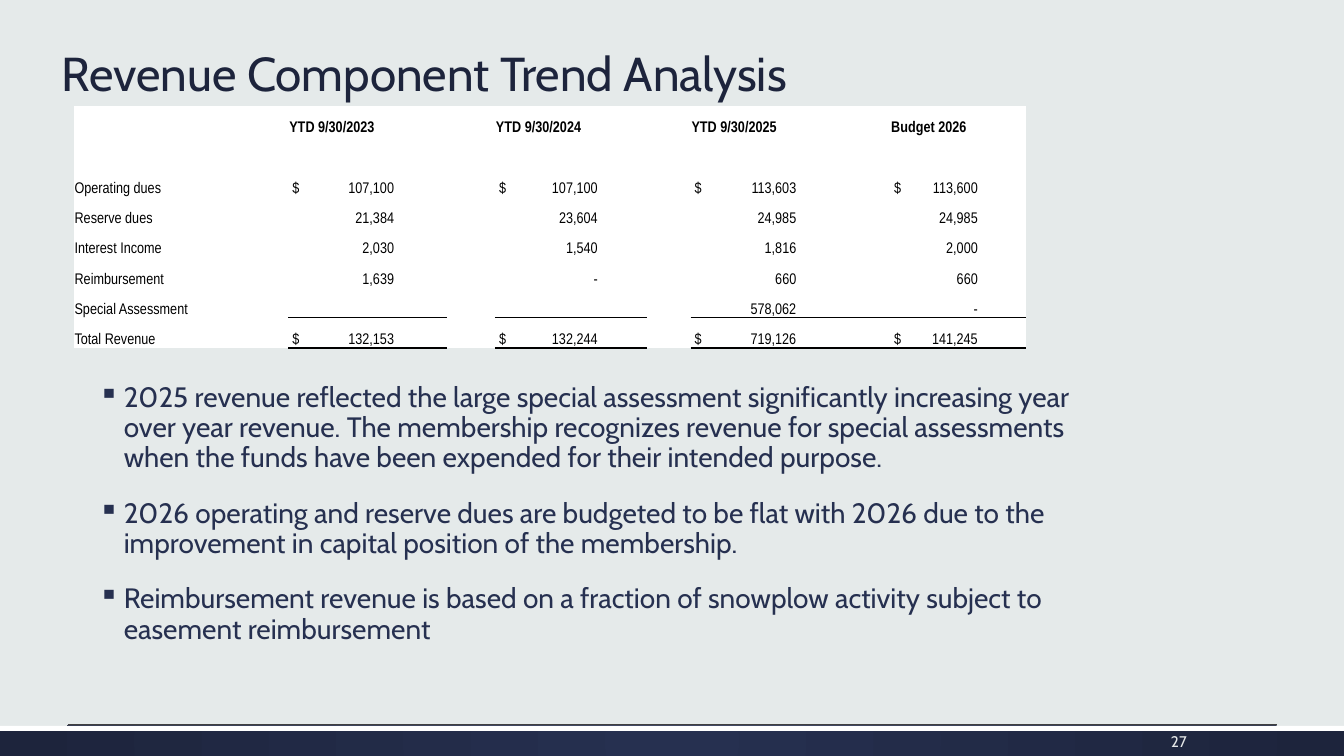
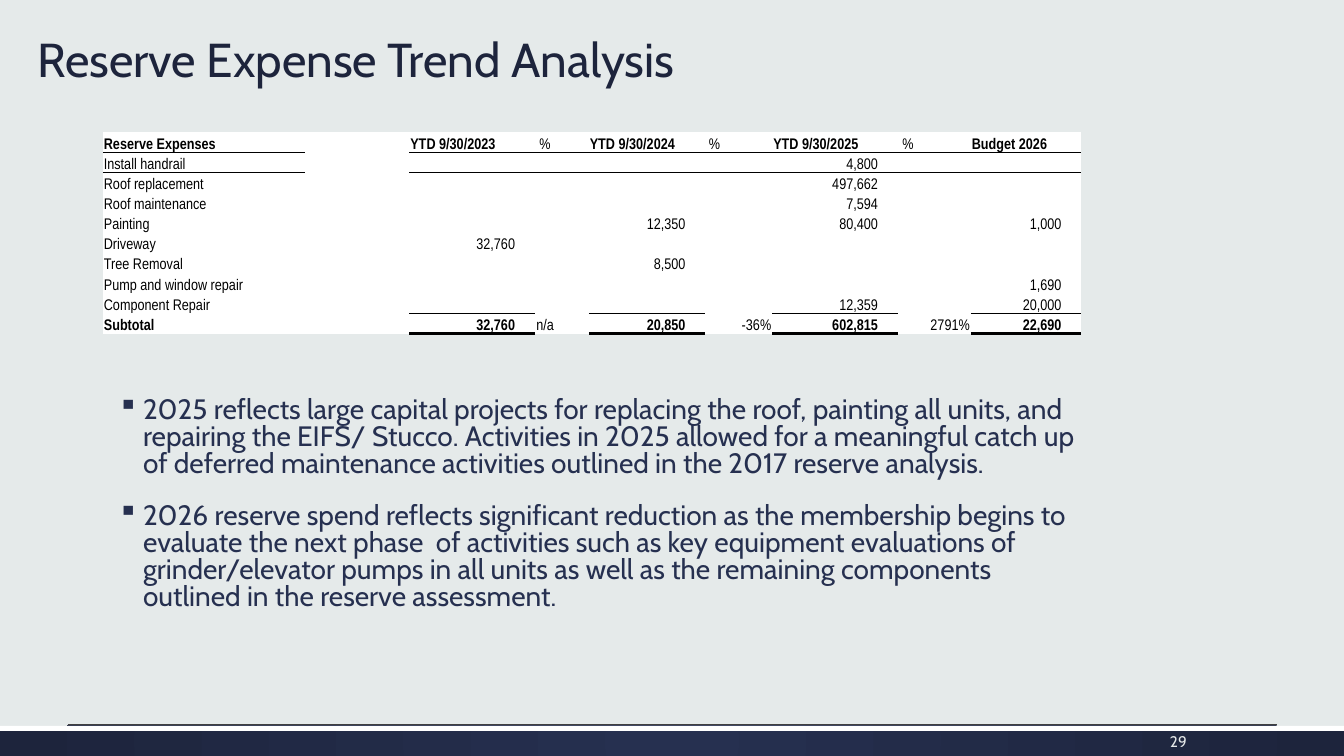
from lxml import etree
from pptx import Presentation
from pptx.dml.color import RGBColor
from pptx.enum.shapes import MSO_CONNECTOR, MSO_SHAPE
from pptx.enum.text import MSO_ANCHOR, MSO_AUTO_SIZE, PP_ALIGN
from pptx.oxml.ns import qn
from pptx.util import Inches, Pt

NAVY = RGBColor(0x26, 0x30, 0x50)
DARK_NAVY = RGBColor(0x1D, 0x24, 0x3C)
MIST = RGBColor(0xE5, 0xEA, 0xEA)
PALE = RGBColor(0xE5, 0xE8, 0xE8)
WHITE = RGBColor(0xFF, 0xFF, 0xFF)
BLACK = RGBColor(0, 0, 0)
RULE_GRAY = RGBColor(0x40, 0x40, 0x40)

HEADING_FONT = "Cabin"
TABLE_FONT = "Arial Narrow"
LEFT, RIGHT = PP_ALIGN.LEFT, PP_ALIGN.RIGHT
TOP, MIDDLE, BOTTOM = MSO_ANCHOR.TOP, MSO_ANCHOR.MIDDLE, MSO_ANCHOR.BOTTOM
NO_AUTOFIT = MSO_AUTO_SIZE.NONE
RECTANGLE = MSO_SHAPE.RECTANGLE
STRAIGHT = MSO_CONNECTOR.STRAIGHT

TITLE_ONLY = 5
SLIDE_WIDTH, SLIDE_HEIGHT = 13.33, 7.5
BAND_TOP = 7.2
PLAIN_TABLE_STYLE = "{2D5ABB26-0587-4C30-8999-92F81FD0307C}"
TABLE_TEXT_SIZE = 11
HAIRLINE, HEAVY = 0.5, 2


def add_element(parent, tag, **attributes):
    return etree.SubElement(parent, qn(tag), attributes)


def write(para, text, font=HEADING_FONT, size=20, color=NAVY, bold=False,
          align=LEFT, spacing=None, before=0):
    para.alignment = align
    para.space_before = Pt(before)
    if spacing:
        para.line_spacing = spacing
    span = para.add_run()
    span.text = text
    span.font.name = font
    span.font.size = Pt(size)
    span.font.bold = bold
    span.font.color.rgb = color


def prepare_frame(box, anchor):
    frame = box.text_frame
    frame.word_wrap = True
    frame.auto_size = NO_AUTOFIT
    frame.vertical_anchor = anchor
    return frame


def add_text_box(page, left, top, width, height, anchor=TOP):
    box = page.shapes.add_textbox(
        Inches(left), Inches(top), Inches(width), Inches(height))
    return prepare_frame(box, anchor)


def add_bar(page, top, height):
    bar = page.shapes.add_shape(
        RECTANGLE, 0, Inches(top), Inches(SLIDE_WIDTH), Inches(height))
    bar.shadow.inherit = False
    bar.line.fill.background()
    return bar


def add_footer(page, number):
    band = add_bar(page, BAND_TOP, SLIDE_HEIGHT - BAND_TOP)
    band.fill.gradient()
    for stop, color in zip(band.fill.gradient_stops, (NAVY, DARK_NAVY)):
        stop.color.rgb = color
    gradient = band._element.spPr.find(qn("a:gradFill"))
    gradient.remove(gradient.find(qn("a:lin")))
    radial = etree.Element(qn("a:path"), {"path": "circle"})
    add_element(radial, "a:fillToRect", l="50000", t="50000", r="50000", b="50000")
    gradient.find(qn("a:gsLst")).addnext(radial)

    strip = add_bar(page, BAND_TOP, 0.05)
    strip.fill.solid()
    strip.fill.fore_color.rgb = WHITE

    rule_top = Inches(BAND_TOP - 0.01)
    rule = page.shapes.add_connector(
        STRAIGHT, Inches(0.67), rule_top, Inches(12.67), rule_top)
    rule.line.color.rgb = RULE_GRAY
    rule.line.width = Pt(0.75)
    add_element(rule._element.spPr, "a:effectLst")

    frame = add_text_box(page, 11.17, 7.23, 0.7, 0.26, MIDDLE)
    write(frame.paragraphs[0], number, size=11, color=PALE, align=RIGHT)


def add_page(deck, title, left, top, number):
    page = deck.slides.add_slide(deck.slide_layouts[TITLE_ONLY])
    add_footer(page, number)
    box = page.shapes.title
    box.left, box.top = Inches(left), Inches(top)
    box.width, box.height = Inches(10.4), Inches(0.71)
    frame = prepare_frame(box, BOTTOM)
    write(frame.paragraphs[0], title, size=34, color=DARK_NAVY, spacing=0.9)
    return page


def add_bullets(page, left, top, width, height, texts, spacing):
    frame = add_text_box(page, left, top, width, height)
    for index, text in enumerate(texts):
        para = frame.add_paragraph() if index else frame.paragraphs[0]
        properties = para._p.get_or_add_pPr()
        properties.set("marL", str(Inches(0.3)))
        properties.set("indent", str(Inches(-0.25)))
        bullet_color = add_element(properties, "a:buClr")
        add_element(bullet_color, "a:srgbClr", val=str(NAVY))
        add_element(properties, "a:buChar", char="▪")
        write(para, text, spacing=spacing, before=18 if index else 0)


def fill_cell(cell, text="", bold=False, align=LEFT, inset=0.01, tab=None):
    cell.fill.solid()
    cell.fill.fore_color.rgb = WHITE
    cell.vertical_anchor = BOTTOM
    cell.margin_left = Inches(inset)
    cell.margin_right = cell.margin_top = Inches(0.01)
    cell.margin_bottom = 0
    para = cell.text_frame.paragraphs[0]
    if not text:
        add_element(para._p, "a:endParaRPr", sz=str(TABLE_TEXT_SIZE * 100))
        return
    if tab:
        stops = add_element(para._p.get_or_add_pPr(), "a:tabLst")
        add_element(stops, "a:tab", pos=str(Inches(tab - inset)), algn="r")
    write(para, text, font=TABLE_FONT, size=TABLE_TEXT_SIZE, color=BLACK,
          bold=bold, align=align)


def add_border(cell, side, points):
    properties = cell._tc.get_or_add_tcPr()
    line = etree.Element(qn(side), {"w": str(Pt(points))})
    fill = add_element(line, "a:solidFill")
    add_element(fill, "a:srgbClr", val=str(BLACK))
    properties.insert(len(properties.findall(qn("a:lnT"))), line)


def add_finance_table(page, left, top, widths, row_height, rows, tabs,
                      bold_rows, rules, notes):
    table = page.shapes.add_table(
        len(rows), len(widths), Inches(left), Inches(top),
        Inches(sum(widths)), Inches(row_height * len(rows))).table
    table.first_row = table.horz_banding = False
    table._tbl.tblPr.find(qn("a:tableStyleId")).text = PLAIN_TABLE_STYLE
    for column, width in zip(table.columns, widths):
        column.width = Inches(width)
    for row_index, values in enumerate(rows):
        texts = dict(zip((0, *tabs), values))
        for column_index in range(len(widths)):
            cell = table.cell(row_index, column_index)
            text = texts.get(column_index, "")
            bold = row_index in bold_rows
            if (row_index, column_index) in notes:
                fill_cell(cell, **notes[row_index, column_index])
            elif text and row_index and column_index in tabs:
                amount = text.replace("$", "$\t") if "$" in text else "\t" + text
                fill_cell(cell, amount, bold, inset=0.04, tab=tabs[column_index])
            else:
                fill_cell(cell, text, bold)
    for row_index, columns, points in rules:
        for column_index in columns:
            add_border(table.cell(row_index, column_index), "a:lnB", points)
            if row_index + 1 < len(rows):
                add_border(table.cell(row_index + 1, column_index), "a:lnT", points)


def build_revenue_page(deck):
    page = add_page(deck, "Revenue Component Trend Analysis", 0.51, 0.35, "27")
    add_bullets(page, 0.83, 3.75, 9.96, 3.05, (
        "2025 revenue reflected the large special assessment significantly "
        "increasing year over year revenue. The membership recognizes revenue for "
        "special assessments when the funds have been expended for their intended "
        "purpose.",
        "2026 operating and reserve dues are budgeted to be flat with 2026 due to "
        "the improvement in capital position of the membership.",
        "Reimbursement revenue is based on a fraction of snowplow activity subject "
        "to easement reimbursement",
    ), spacing=0.9)
    rows = (
        ("", "YTD 9/30/2023", "YTD 9/30/2024", "YTD 9/30/2025", "Budget 2026"),
        (),
        ("Operating dues", "$107,100", "$107,100", "$113,603", "$113,600"),
        ("Reserve dues", "21,384", "23,604", "24,985", "24,985"),
        ("Interest Income", "2,030", "1,540", "1,816", "2,000"),
        ("Reimbursement", "1,639", "-", "660", "660"),
        ("Special Assessment", "", "", "578,062", "-"),
        ("Total Revenue", "$132,153", "$132,244", "$719,126", "$141,245"),
    )
    ruled = (1, 3, 5, 6, 7)
    add_finance_table(
        page, 0.73, 1.05, (2.13, 1.57, 0.48, 1.51, 0.43, 1.55, 0.43, 1.35), 0.3,
        rows, tabs={1: 1.05, 3: 1.02, 5: 1.05, 7: 0.87}, bold_rows=(0,),
        rules=((6, ruled, HAIRLINE), (7, ruled, HEAVY)), notes={})


def build_reserve_page(deck):
    page = add_page(deck, "Reserve Expense Trend Analysis", 0.27, 0.21, "29")
    add_bullets(page, 1.02, 3.9, 9.81, 2.41, (
        "2025 reflects large capital projects for replacing the roof, painting all "
        "units, and repairing the EIFS/ Stucco. Activities in 2025 allowed for a "
        "meaningful catch up of deferred maintenance activities outlined in the "
        "2017 reserve analysis.",
        "2026 reserve spend reflects significant reduction as the membership begins "
        "to evaluate the next phase  of activities such as key equipment evaluations "
        "of grinder/elevator pumps in all units as well as the remaining components "
        "outlined in the reserve assessment.",
    ), spacing=0.8)
    rows = (
        ("Reserve Expenses", "YTD 9/30/2023", "YTD 9/30/2024", "YTD 9/30/2025",
         "Budget 2026"),
        ("Install handrail", "", "", "4,800"),
        ("Roof replacement", "", "", "497,662"),
        ("Roof maintenance", "", "", "7,594"),
        ("Painting", "", "12,350", "80,400", "1,000"),
        ("Driveway", "32,760"),
        ("Tree Removal", "", "8,500"),
        ("Pump and window repair", "", "", "", "1,690"),
        ("Component Repair", "", "", "12,359", "20,000"),
        ("Subtotal", "32,760", "20,850", "602,815", "22,690"),
    )
    tabs = {3: 1.05, 5: 0.96, 7: 1.05, 9: 0.9}
    notes = {(0, column): {"text": "%", "inset": 0.04} for column in (4, 6, 8)}
    notes[9, 4] = {"text": "n/a"}
    notes[9, 6] = {"text": "-36%", "align": RIGHT}
    notes[9, 8] = {"text": "2791%", "align": RIGHT}
    add_finance_table(
        page, 1.02, 1.31,
        (2.01, 0.8, 0.23, 1.25, 0.53, 1.15, 0.67, 1.25, 0.72, 1.09), 0.2,
        rows, tabs, bold_rows=(0, 9),
        rules=((0, (0, *range(3, 10)), HAIRLINE), (8, tabs, HAIRLINE),
               (9, tabs, HEAVY)), notes=notes)


def main():
    deck = Presentation()
    deck.slide_width = Inches(SLIDE_WIDTH)
    deck.slide_height = Inches(SLIDE_HEIGHT)
    background = deck.slide_master.background.fill
    background.solid()
    background.fore_color.rgb = MIST
    build_revenue_page(deck)
    build_reserve_page(deck)
    deck.save("out.pptx")


if __name__ == "__main__":
    main()
